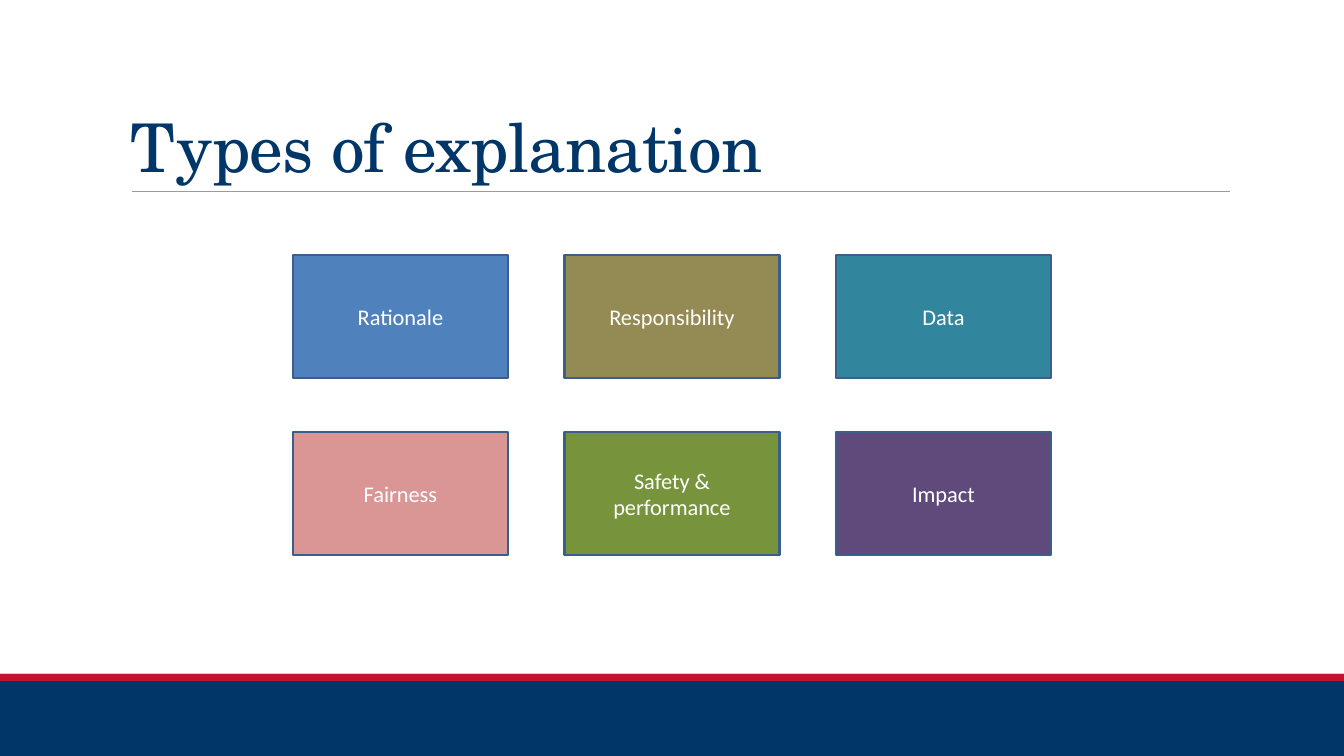
import collections
import dataclasses

import lxml.etree
import pptx
import pptx.dml.color
import pptx.enum.shapes
import pptx.enum.text
import pptx.oxml.ns
import pptx.util

EMU_PER_PX = 914400 / 100.8
SHAPES = pptx.enum.shapes.MSO_SHAPE
ANCHORS = pptx.enum.text.MSO_ANCHOR
ALIGNS = pptx.enum.text.PP_ALIGN

Box = collections.namedtuple("Box", "left top width height")


@dataclasses.dataclass(frozen=True)
class Theme:
    navy: str = "003768"
    red: str = "C41230"
    rule: str = "9B9B9B"
    outline: str = "3A5F8C"
    white: str = "FFFFFF"
    title_font: str = "TeX Gyre Schola"
    body_font: str = "Calibri"
    title_size: int = 48
    body_size: int = 16
    rule_width: float = 0.5
    outline_width: int = 2


THEME = Theme()
PAGE = Box(0, 0, 1344, 756)

EXPLANATIONS = [
    [("Rationale", "4F81BD"), ("Responsibility", "948A54"), ("Data", "31859C")],
    [("Fairness", "D99694"), ("Safety & performance", "77933C"), ("Impact", "604A7B")],
]


def px(length):
    return pptx.util.Emu(round(length * EMU_PER_PX))


def rgb(color):
    return pptx.dml.color.RGBColor.from_string(color)


def add_block(page, box, kind, fill):
    """Add a filled shape with neither shadow nor outline."""
    block = page.shapes.add_shape(kind, *map(px, box))
    block.shadow.inherit = False
    block.fill.solid()
    block.fill.fore_color.rgb = rgb(fill)
    block.line.fill.background()
    return block


def add_span(para, text, font, size, color):
    span = para.add_run()
    span.text = text
    span.font.name = font
    span.font.size = pptx.util.Pt(size)
    span.font.color.rgb = rgb(color)
    return span


def add_footer(page, box):
    add_block(page, box, SHAPES.RECTANGLE, THEME.navy)
    add_block(page, box._replace(height=7), SHAPES.RECTANGLE, THEME.red)


def add_title(page, box, text):
    """Set the title at the bottom of the box, with a rule beneath it."""
    bottom = px(box.top + box.height)
    rule = page.shapes.add_connector(
        pptx.enum.shapes.MSO_CONNECTOR.STRAIGHT,
        px(box.left + 11), bottom, px(box.left + box.width), bottom)
    rule.line.color.rgb = rgb(THEME.rule)
    rule.line.width = pptx.util.Pt(THEME.rule_width)
    lxml.etree.SubElement(rule._element.spPr, pptx.oxml.ns.qn("a:effectLst"))

    frame = page.shapes.add_textbox(*map(px, box)).text_frame
    frame.word_wrap = True
    frame.vertical_anchor = ANCHORS.BOTTOM
    para = frame.paragraphs[0]
    para.line_spacing = 0.85
    span = add_span(para, text, THEME.title_font, THEME.title_size, THEME.navy)
    span._r.get_or_add_rPr().set("spc", "-50")


def add_card(page, box, label, fill):
    card = add_block(page, box, SHAPES.FLOWCHART_PROCESS, fill)
    card.line.color.rgb = rgb(THEME.outline)
    card.line.width = pptx.util.Pt(THEME.outline_width)
    frame = card.text_frame
    frame.word_wrap = True
    frame.vertical_anchor = ANCHORS.MIDDLE
    para = frame.paragraphs[0]
    para.alignment = ALIGNS.CENTER
    add_span(para, label, THEME.body_font, THEME.body_size, THEME.white)


def add_card_grid(page, box, rows, card_width=215, card_height=123):
    """Spread the cards evenly so that the outer ones touch the box edges."""
    column_step = (box.width - card_width) / (len(rows[0]) - 1)
    row_step = (box.height - card_height) / (len(rows) - 1)
    for row, cards in enumerate(rows):
        for column, (label, fill) in enumerate(cards):
            card_box = Box(box.left + column * column_step,
                           box.top + row * row_step, card_width, card_height)
            add_card(page, card_box, label, fill)


def main():
    deck = pptx.Presentation()
    deck.slide_width, deck.slide_height = px(PAGE.width), px(PAGE.height)
    page = deck.slides.add_slide(deck.slide_layouts[6])
    add_footer(page, Box(0, 674, PAGE.width, 82))
    add_title(page, Box(121, 31, 1109, 160), "Types of explanation")
    add_card_grid(page, Box(293, 255, 758, 300), EXPLANATIONS)
    deck.save("out.pptx")


if __name__ == "__main__":
    main()
